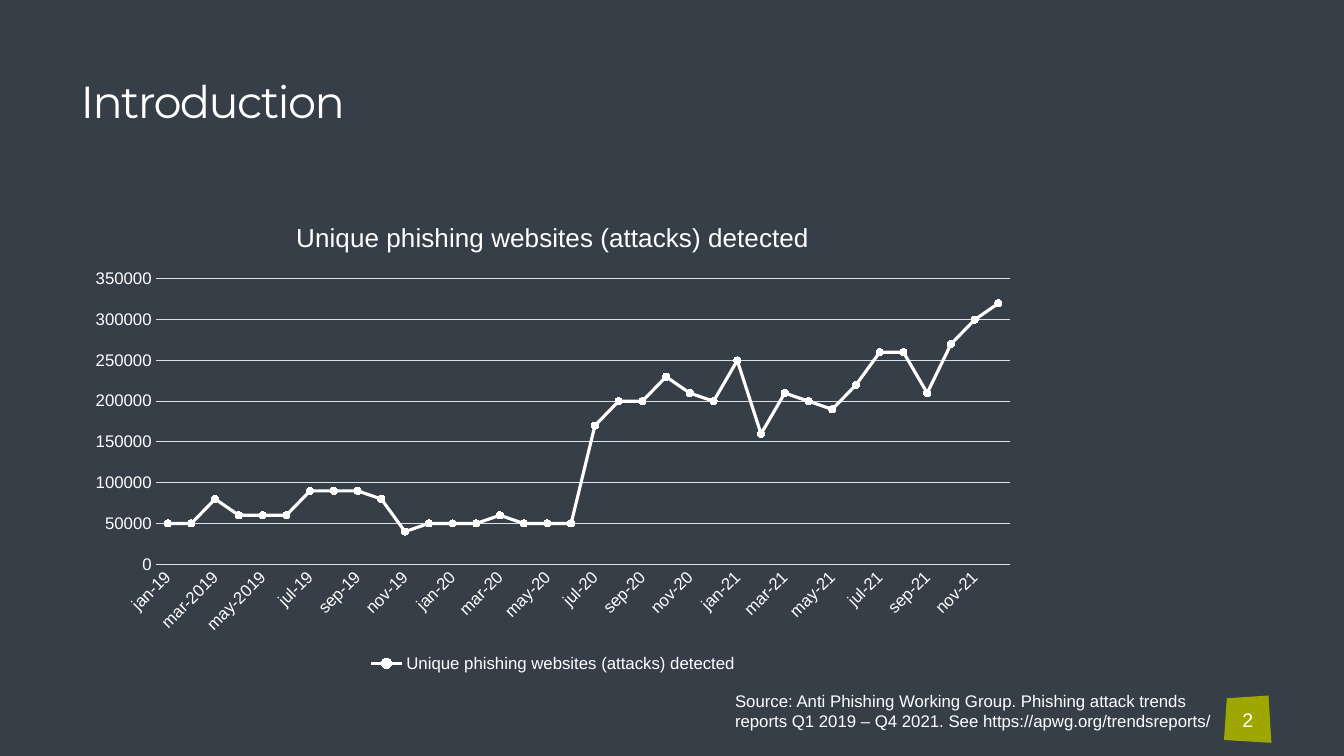
from lxml.etree import SubElement
from pptx import Presentation
from pptx.chart.data import CategoryChartData
from pptx.dml.color import RGBColor
from pptx.enum.chart import XL_CHART_TYPE, XL_LEGEND_POSITION, XL_MARKER_STYLE, XL_TICK_MARK
from pptx.enum.text import MSO_ANCHOR, PP_ALIGN
from pptx.oxml.ns import qn
from pptx.util import Inches, Pt

COLORS = {"background": "363E48", "text": "FFFFFF", "grid": "DEE2E6", "badge": "9EA700"}
SERIES_NAME = "Unique phishing websites (attacks) detected"
SOURCE = ("Source: Anti Phishing Working Group. Phishing attack trends reports "
          "Q1 2019 – Q4 2021. See https://apwg.org/trendsreports/")
MONTHS = ["jan", "feb", "mar", "apr", "may", "jun", "jul", "aug", "sep", "okt", "nov", "dec"]
LONG_LABELS = {"mar-19": "mar-2019", "may-19": "may-2019"}
ATTACKS_IN_TEN_THOUSANDS = [
    5, 5, 8, 6, 6, 6, 9, 9, 9, 8, 4, 5,
    5, 5, 6, 5, 5, 5, 17, 20, 20, 23, 21, 20,
    25, 16, 21, 20, 19, 22, 26, 26, 21, 27, 30, 32,
]


def color(name):
    """Return the named colour."""
    return RGBColor.from_string(COLORS[name])


def style_font(font, size, name="Arial"):
    """Give a font its size, typeface and the text colour."""
    font.size = Pt(size)
    font.name = name
    font.bold = False
    font.color.rgb = color("text")


def add_text(slide, box, text, size, name="Arial", anchor=MSO_ANCHOR.TOP):
    """Add a wrapped text box and return its paragraph."""
    frame = slide.shapes.add_textbox(*map(Inches, box)).text_frame
    frame.word_wrap = True
    frame.vertical_anchor = anchor
    frame.margin_left = frame.margin_right = Inches(0.04)
    frame.margin_top = frame.margin_bottom = 0
    frame.text = text
    paragraph = frame.paragraphs[0]
    style_font(paragraph.runs[0].font, size, name)
    return paragraph


def add_title(slide, box):
    """Add the slide title with tightened letter spacing."""
    paragraph = add_text(slide, box, "Introduction", 32, "Montserrat", MSO_ANCHOR.BOTTOM)
    paragraph.line_spacing = 0.9
    paragraph.runs[0].font._element.set("spc", "-120")


def add_number_badge(slide, box):
    """Draw the skewed badge and the slide number on it."""
    left, top, width, height = box
    corners = [(left + width * across, top + height * down)
               for across, down in [(0.94, 0), (0.06, 0.06), (0, 0.94), (1, 1)]]
    points = [(Inches(x), Inches(y)) for x, y in corners]
    builder = slide.shapes.build_freeform(*points[0])
    builder.add_line_segments(points[1:], close=True)
    badge = builder.convert_to_shape()
    badge.shadow.inherit = False
    badge.fill.solid()
    badge.fill.fore_color.rgb = color("badge")
    badge.line.fill.background()
    number_box = (left, top + 0.12, width, 0.24)
    paragraph = add_text(slide, number_box, "2", 14, anchor=MSO_ANCHOR.BOTTOM)
    paragraph.alignment = PP_ALIGN.CENTER


def style_axis(axis):
    """Remove tick marks and set the label font of an axis."""
    axis.major_tick_mark = axis.minor_tick_mark = XL_TICK_MARK.NONE
    style_font(axis.tick_labels.font, 12)


def style_line(line, name, width):
    """Set the colour and width of a line."""
    line.color.rgb = color(name)
    line.width = Pt(width)


def add_attacks_chart(slide, box):
    """Add the line chart of monthly phishing attacks."""
    labels = [f"{month}-{year}" for year in (19, 20, 21) for month in MONTHS]
    data = CategoryChartData()
    data.categories = [LONG_LABELS.get(label, label) for label in labels]
    data.add_series(SERIES_NAME, [value * 10000 for value in ATTACKS_IN_TEN_THOUSANDS])
    chart = slide.shapes.add_chart(XL_CHART_TYPE.LINE_MARKERS, *map(Inches, box), data).chart
    style_font(chart.font, 12)

    chart.has_title = True
    title_frame = chart.chart_title.text_frame
    title_frame.text = SERIES_NAME
    style_font(title_frame.paragraphs[0].runs[0].font, 18.6)
    chart.chart_title.include_in_layout = False

    chart.has_legend = True
    chart.legend.position = XL_LEGEND_POSITION.BOTTOM
    chart.legend.include_in_layout = False
    style_font(chart.legend.font, 12)

    style_axis(chart.category_axis)
    style_line(chart.category_axis.format.line, "grid", 0.75)
    style_axis(chart.value_axis)
    chart.value_axis.format.line.fill.background()
    style_line(chart.value_axis.major_gridlines.format.line, "grid", 0.75)

    plot = chart.plots[0]
    plot.vary_by_categories = False
    series = plot.series[0]
    series.smooth = False
    style_line(series.format.line, "text", 2.25)
    properties = series.format.line._get_or_add_ln()
    SubElement(properties, qn("a:round"))
    series.marker.style = XL_MARKER_STYLE.CIRCLE
    series.marker.size = 5
    series.marker.format.fill.solid()
    series.marker.format.fill.fore_color.rgb = color("text")
    style_line(series.marker.format.line, "text", 0.75)


def main():
    """Build and save the slide."""
    presentation = Presentation()
    presentation.slide_width = Inches(13.33)
    presentation.slide_height = Inches(7.5)
    slide = presentation.slides.add_slide(presentation.slide_layouts[6])
    slide.background.fill.solid()
    slide.background.fill.fore_color.rgb = color("background")
    add_number_badge(slide, (12.14, 6.9, 0.47, 0.47))
    add_title(slide, (0.76, 0.6, 11.81, 0.67))
    add_attacks_chart(slide, (0.76, 1.99, 9.45, 4.72))
    add_text(slide, (7.25, 6.85, 4.89, 0.4), SOURCE, 12)
    presentation.save("out.pptx")


if __name__ == "__main__":
    main()
